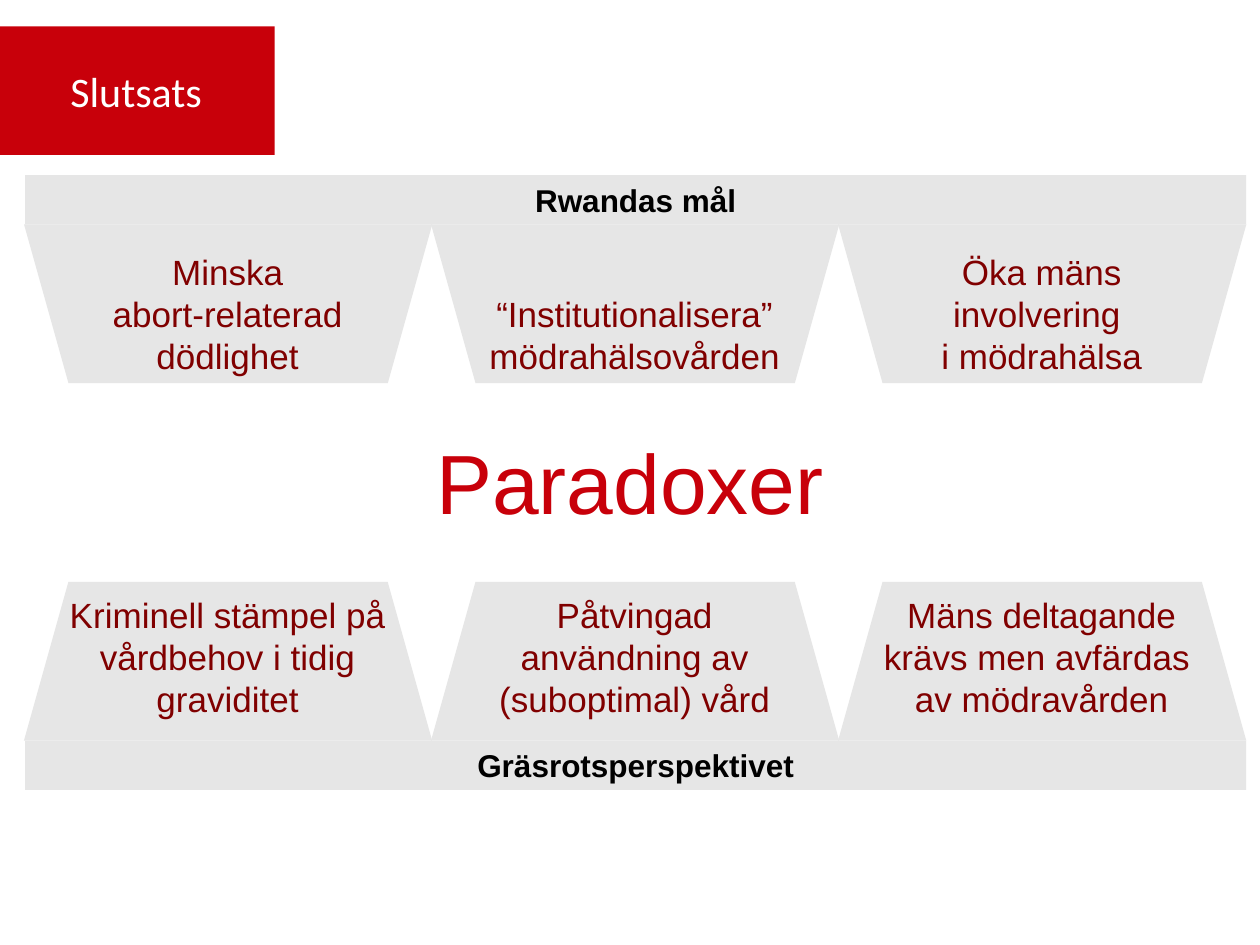
from pptx import Presentation
from pptx.dml.color import RGBColor
from pptx.enum import shapes, text
from pptx.util import Pt

RED = RGBColor(0xC8, 0x00, 0x0A)
DARK_RED = RGBColor(0x80, 0x00, 0x00)
GREY = RGBColor(0xE6, 0xE6, 0xE6)
BLACK = RGBColor(0x00, 0x00, 0x00)
WHITE = RGBColor(0xFF, 0xFF, 0xFF)

RECTANGLE = shapes.MSO_SHAPE.RECTANGLE
TRAPEZOID = shapes.MSO_SHAPE.TRAPEZOID
MIDDLE = text.MSO_ANCHOR.MIDDLE
BOTTOM = text.MSO_ANCHOR.BOTTOM

BAR_LEFT, BAR_WIDTH, BAR_HEIGHT = 14.4, 697.7, 28.1
COLUMN_LEFT, COLUMN_STEP = 13.7, 232.6
COLUMN_WIDTH, COLUMN_HEIGHT = 233.3, 90.7
LABEL_INDENT, LABEL_WIDTH = 11.6, 209.5
GOALS_TOP, GRASSROOTS_TOP = 128.2, 332.6

GOALS = [
    ["Minska", "abort-relaterad dödlighet"],
    ["“Institutionalisera” mödrahälsovården"],
    ["Öka mäns", "involvering ", "i mödrahälsa"],
]
GRASSROOTS = [
    ["Kriminell stämpel på vårdbehov i tidig graviditet"],
    ["Påtvingad användning av (suboptimal) vård"],
    ["Mäns deltagande krävs men avfärdas ", "av mödravården"],
]


class SlideBuilder:
    def __init__(self, slide, font="Arial"):
        self.slide = slide
        self.font = font

    def set_text(self, shape, lines, size, color, bold=False, font=None,
                 anchor=MIDDLE, spacing=None):
        frame = shape.text_frame
        frame.word_wrap = True
        frame.vertical_anchor = anchor
        frame.text = "\n".join(lines)
        for paragraph in frame.paragraphs:
            paragraph.alignment = text.PP_ALIGN.CENTER
            paragraph.line_spacing = spacing
            paragraph.font.name = font or self.font
            paragraph.font.size = Pt(size)
            paragraph.font.bold = bold
            paragraph.font.color.rgb = color

    def block(self, kind, left, top, width, height, fill):
        shape = self.slide.shapes.add_shape(
            kind, Pt(left), Pt(top), Pt(width), Pt(height))
        shape.shadow.inherit = False
        shape.fill.solid()
        shape.fill.fore_color.rgb = fill
        shape.line.fill.background()
        return shape

    def bar(self, top, heading):
        bar = self.block(RECTANGLE, BAR_LEFT, top, BAR_WIDTH, BAR_HEIGHT, GREY)
        self.set_text(bar, [heading], 18, BLACK, bold=True)

    def label(self, left, top, width, height, lines, size, color, **style):
        box = self.slide.shapes.add_textbox(
            Pt(left), Pt(top), Pt(width), Pt(height))
        self.set_text(box, lines, size, color, **style)

    def columns(self, top, statements, label_height, anchor, rotation=0):
        """Draw a row of trapezoids with one statement on each."""
        lefts = [COLUMN_LEFT + i * COLUMN_STEP for i in range(len(statements))]
        for left in lefts:
            column = self.block(
                TRAPEZOID, left, top, COLUMN_WIDTH, COLUMN_HEIGHT, GREY)
            column.adjustments[0] = 0.28
            column.rotation = rotation
        for left, lines in zip(lefts, statements):
            self.label(left + LABEL_INDENT, top, LABEL_WIDTH, label_height,
                       lines, 20, DARK_RED, anchor=anchor, spacing=Pt(24))


def main():
    deck = Presentation()
    deck.slide_width, deck.slide_height = Pt(720), Pt(540)
    builder = SlideBuilder(deck.slides.add_slide(deck.slide_layouts[6]))

    builder.bar(GOALS_TOP - BAR_HEIGHT, "Rwandas mål")
    builder.columns(GOALS_TOP, GOALS, COLUMN_HEIGHT, BOTTOM, rotation=180)
    builder.label(42.5, 242, 635, 65.5, ["Paradoxer"], 48, RED)
    builder.columns(GRASSROOTS_TOP, GRASSROOTS, 85, MIDDLE)
    builder.bar(GRASSROOTS_TOP + COLUMN_HEIGHT, "Gräsrotsperspektivet")

    title = builder.block(RECTANGLE, -1.4, 15.1, 158.4, 73.4, RED)
    builder.set_text(title, ["Slutsats"], 24, WHITE, font="Calibri")

    deck.save("out.pptx")


if __name__ == "__main__":
    main()
